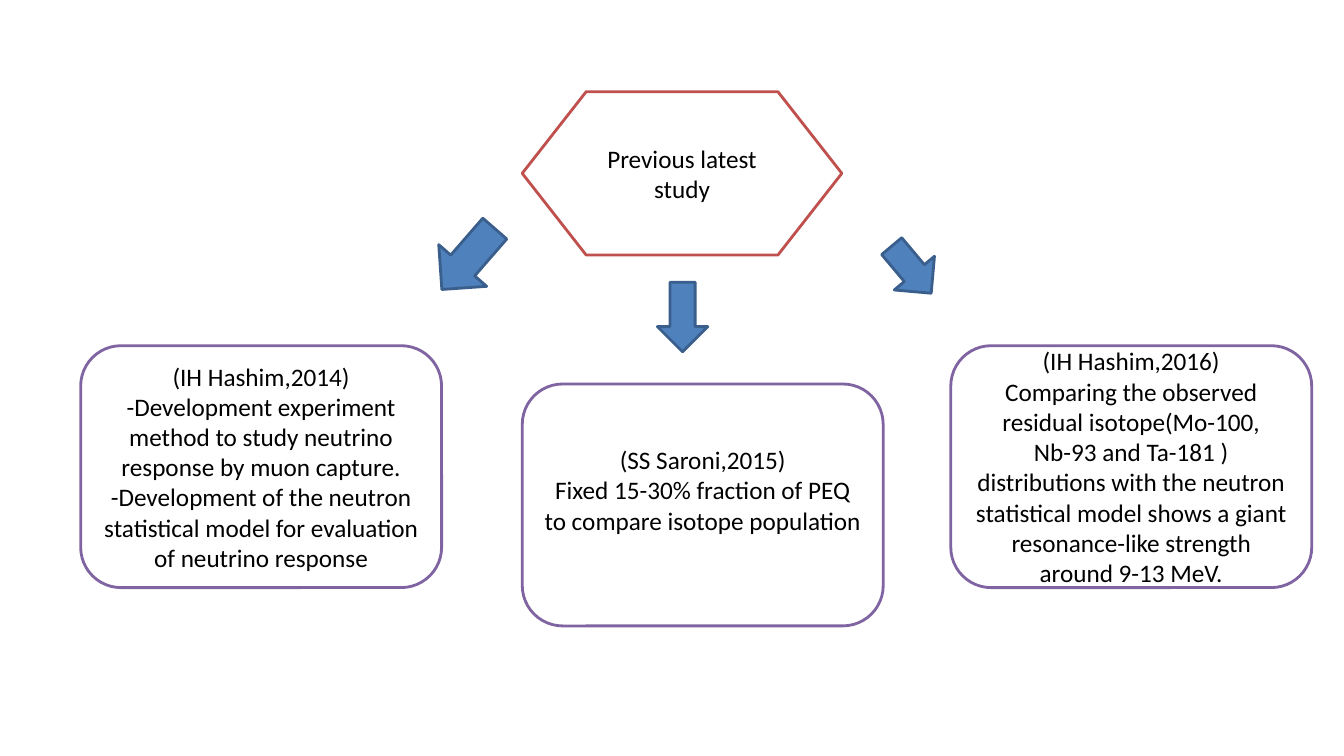
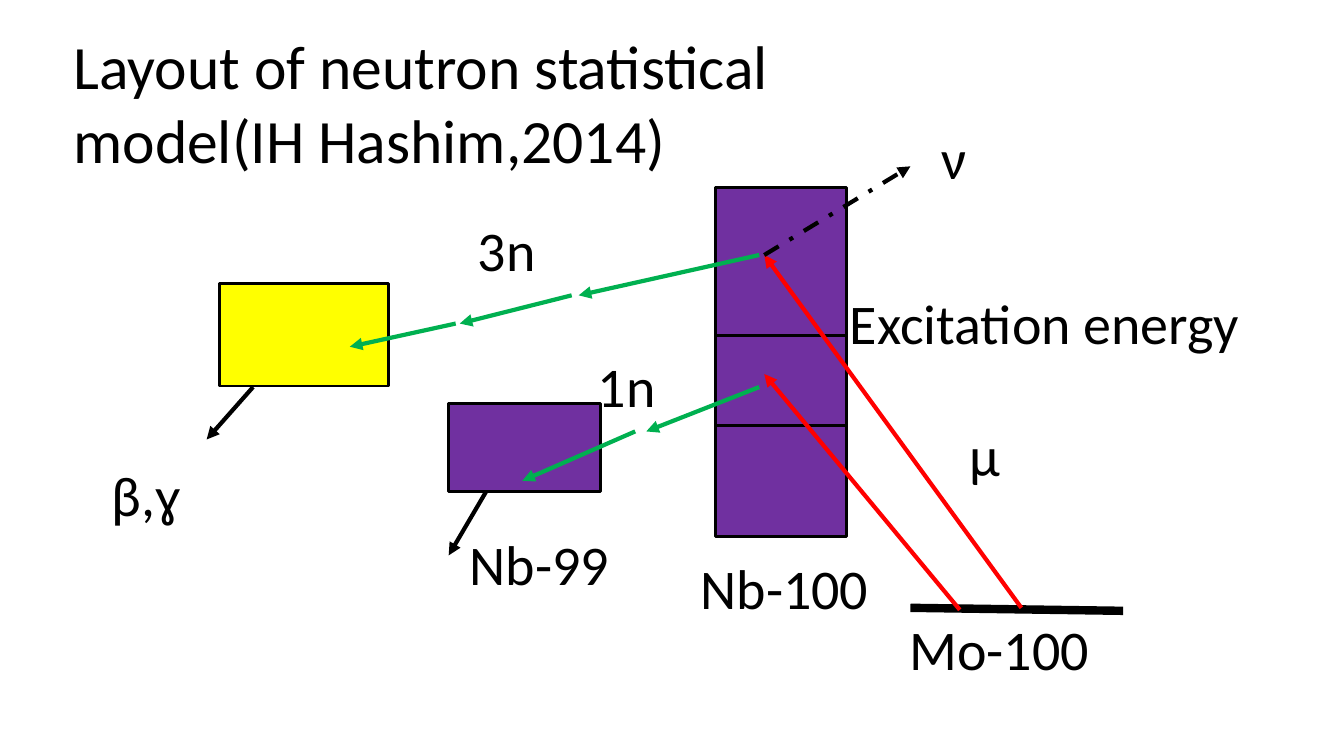
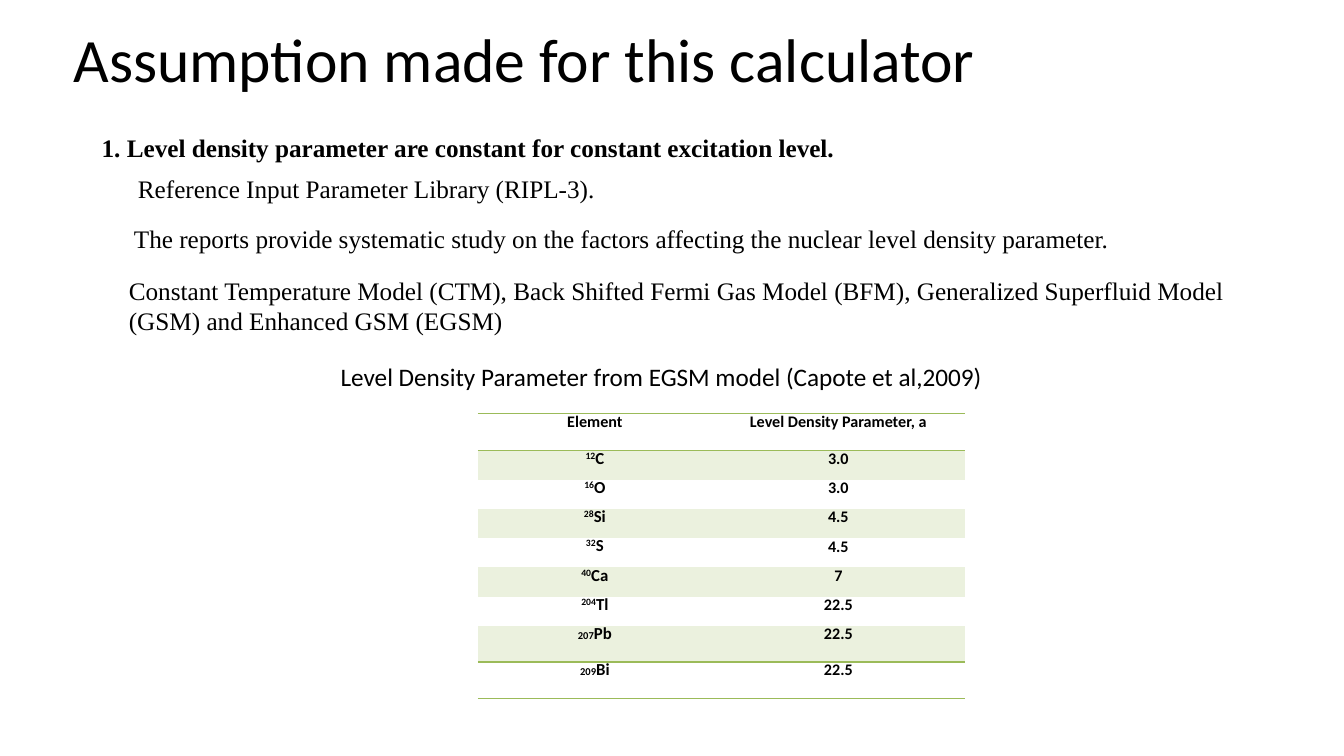
"""Build three slides on neutron statistical model studies."""
import dataclasses
from typing import Optional

import lxml.etree
import pptx
import pptx.dml.color
import pptx.enum.dml
import pptx.enum.shapes
import pptx.enum.text
import pptx.oxml.ns
import pptx.presentation
import pptx.shapes.autoshape
import pptx.slide
import pptx.table
import pptx.text.text
import pptx.util

Inches = pptx.util.Inches
Pt = pptx.util.Pt
RGBColor = pptx.dml.color.RGBColor
Shape = pptx.enum.shapes.MSO_SHAPE
Align = pptx.enum.text.PP_ALIGN
Anchor = pptx.enum.text.MSO_ANCHOR
qn = pptx.oxml.ns.qn

BLACK = RGBColor(0x00, 0x00, 0x00)
WHITE = RGBColor(0xFF, 0xFF, 0xFF)
CRIMSON = RGBColor(0xC0, 0x50, 0x4D)
LAVENDER = RGBColor(0x80, 0x64, 0xA2)
BLUE = RGBColor(0x4F, 0x81, 0xBD)
NAVY = RGBColor(0x3A, 0x5F, 0x8C)
PURPLE = RGBColor(0x70, 0x30, 0xA0)
YELLOW = RGBColor(0xFF, 0xFF, 0x00)
RED = RGBColor(0xFF, 0x00, 0x00)
GREEN = RGBColor(0x00, 0xB0, 0x50)
OLIVE = RGBColor(0x9B, 0xBB, 0x59)
PALE_OLIVE = RGBColor(0xEB, 0xF1, 0xDE)

SANS = "Calibri"
SERIF = "Times New Roman"
PLAIN_TABLE_STYLE = "{2D5ABB26-0587-4C30-8999-92F81FD0307C}"


@dataclasses.dataclass(frozen=True)
class Block:
    left: float
    top: float
    width: float
    height: float
    fill: RGBColor
    line: RGBColor = BLACK
    kind: Shape = Shape.RECTANGLE
    lines: tuple[str, ...] = ()
    rotation: float = 0
    bottom_inset: float = 0.05


@dataclasses.dataclass(frozen=True)
class Label:
    left: float
    top: float
    width: float
    height: float
    text: str
    size: float = 18
    font: str = SANS
    bold: bool = False


@dataclasses.dataclass(frozen=True)
class Path:
    start: tuple[float, float]
    end: tuple[float, float]
    color: RGBColor
    width: float = 3
    arrow: bool = True
    dash: Optional[pptx.enum.dml.MSO_LINE] = None


@dataclasses.dataclass(frozen=True)
class Nuclide:
    mass: str
    symbol: str
    density: str
    raised: bool = True
    height: float = 0.29


def study(left: float, top: float, *lines: str, bottom_inset: float = 0.05) -> Block:
    """Describe one rounded study box."""
    return Block(left, top, 3.58, 2.4, WHITE, LAVENDER, Shape.ROUNDED_RECTANGLE,
                 lines, bottom_inset=bottom_inset)


def pointer(left: float, top: float, width: float, height: float, rotation: float = 0) -> Block:
    """Describe one block arrow leading to a study."""
    return Block(left, top, width, height, BLUE, NAVY, Shape.DOWN_ARROW, rotation=rotation)


def caption(left: float, top: float, width: float, text: str) -> Label:
    """Describe one large diagram label."""
    return Label(left, top, width, 0.77, text, 40)


STUDY_BLOCKS = (
    Block(5.18, 0.91, 3.17, 1.62, WHITE, CRIMSON, Shape.FLOWCHART_PREPARATION,
          ("Previous latest study",)),
    study(0.8, 3.43, "(IH Hashim,2014)",
          "-Development experiment method to study neutrino response by muon capture.",
          "-Development of the neutron statistical model for evaluation of neutrino response"),
    study(5.18, 3.81, "(SS Saroni,2015)",
          "Fixed 15-30% fraction of PEQ to compare isotope population", bottom_inset=0.35),
    study(9.43, 3.43, "(IH Hashim,2016)",
          "Comparing the observed residual isotope(Mo-100, Nb-93 and Ta-181 ) distributions "
          "with the neutron statistical model shows a giant resonance-like strength "
          "around 9-13 MeV."),
    pointer(6.52, 2.8, 0.5, 0.69),
    pointer(4.33, 2.17, 0.63, 0.8, 41),
    pointer(8.78, 2.37, 0.52, 0.61, 320),
)

LEVEL_HEIGHTS = (1.47, 0.89, 1.1)
DAUGHTERS = (
    Block(4.45, 4, 1.51, 0.88, PURPLE),
    Block(2.18, 2.81, 1.67, 1.02, YELLOW),
)
TRANSITIONS = (
    Path((9.03, 6.03), (11.14, 6.06), BLACK, 6, arrow=False),
    Path((9.52, 6.05), (7.58, 3.71), RED),
    Path((10.13, 6.03), (7.58, 2.53), RED),
    Path((7.53, 3.84), (6.41, 4.28), GREEN),
    Path((6.3, 4.28), (5.18, 4.77), GREEN),
    Path((7.53, 2.53), (5.74, 2.93), GREEN),
    Path((5.67, 2.93), (4.56, 3.21), GREEN),
    Path((4.52, 3.21), (3.47, 3.44), GREEN),
    Path((2.51, 3.84), (2.05, 4.36), BLACK),
    Path((4.82, 4.88), (4.45, 5.51), BLACK),
    Path((7.58, 2.53), (9.03, 1.65), BLACK, dash=pptx.enum.dml.MSO_LINE.DASH_DOT),
)
MODEL_LABELS = (
    caption(8.92, 6.05, 2.96, "Mo-100"),
    caption(6.85, 5.44, 3.17, "Nb-100"),
    caption(4.56, 5.2, 2.36, "Nb-99"),
    caption(1.01, 4.52, 2.42, "β,ɣ"),
    caption(5.83, 3.44, 1.22, "1n"),
    caption(4.64, 2.09, 1.26, "3n"),
    caption(9.52, 4.12, 1.17, "μ"),
    caption(9.24, 1.18, 1.17, "ν"),
    caption(8.33, 2.81, 4.64, "Excitation energy"),
)

ASSUMPTIONS = (
    Label(0.91, 1.26, 8.48, 0.4,
          "1. Level density parameter are constant for constant excitation level.",
          font=SERIF, bold=True),
    Label(1.27, 1.67, 5, 0.4, "Reference Input Parameter Library (RIPL-3).", font=SERIF),
    Label(1.23, 2.17, 10.78, 0.4,
          "The reports provide systematic study on the factors affecting "
          "the nuclear level density parameter.", font=SERIF),
    Label(1.18, 2.68, 11.47, 0.71,
          "Constant Temperature Model (CTM), Back Shifted Fermi Gas Model (BFM), "
          "Generalized Superfluid Model (GSM) and Enhanced GSM (EGSM)", font=SERIF),
    Label(3.28, 3.54, 6.67, 0.4,
          "Level Density Parameter from EGSM model (Capote et al,2009)"),
)
COLUMNS = (("Element", 2.32), ("Level Density Parameter, a", 2.51))
HEADER_HEIGHT = 0.37
NUCLIDES = (
    Nuclide("12", "C", "3.0"),
    Nuclide("16", "O", "3.0"),
    Nuclide("28", "Si", "4.5"),
    Nuclide("32", "S", "4.5"),
    Nuclide("40", "Ca", "7"),
    Nuclide("204", "Tl", "22.5"),
    Nuclide("207", "Pb", "22.5", raised=False, height=0.36),
    Nuclide("209", "Bi", "22.5", raised=False, height=0.36),
)


def style_paragraph(paragraph: pptx.text.text._Paragraph, size: float,
                    font: str = SANS, bold: bool = False) -> None:
    """Set the black font of a whole paragraph."""
    paragraph.font.name = font
    paragraph.font.size = Pt(size)
    paragraph.font.bold = bold
    paragraph.font.color.rgb = BLACK


def draw_block(slide: pptx.slide.Slide, block: Block) -> None:
    """Draw a filled, outlined shape with optional centred lines."""
    shape = slide.shapes.add_shape(block.kind, Inches(block.left), Inches(block.top),
                                   Inches(block.width), Inches(block.height))
    shape.shadow.inherit = False
    shape.rotation = block.rotation
    shape.fill.solid()
    shape.fill.fore_color.rgb = block.fill
    shape.line.color.rgb = block.line
    shape.line.width = Pt(2)
    if not block.lines:
        return
    frame = shape.text_frame
    frame.word_wrap = True
    frame.vertical_anchor = Anchor.MIDDLE
    frame.margin_bottom = Inches(block.bottom_inset)
    frame.text = "\n".join(block.lines)
    for paragraph in frame.paragraphs:
        paragraph.alignment = Align.CENTER
        style_paragraph(paragraph, 18)


def draw_label(slide: pptx.slide.Slide, label: Label) -> None:
    """Draw one wrapped line of free text."""
    frame = slide.shapes.add_textbox(Inches(label.left), Inches(label.top),
                                     Inches(label.width), Inches(label.height)).text_frame
    frame.word_wrap = True
    frame.text = label.text
    style_paragraph(frame.paragraphs[0], label.size, label.font, label.bold)


def draw_title(slide: pptx.slide.Slide, text: str, top: float, height: float) -> None:
    """Draw the slide title in the shared style."""
    draw_label(slide, Label(0.63, top, 9.2, height, text, 44))


def draw_path(slide: pptx.slide.Slide, route: Path) -> None:
    """Draw a straight line, with an arrowhead where asked."""
    connector = slide.shapes.add_connector(
        pptx.enum.shapes.MSO_CONNECTOR.STRAIGHT,
        *(Inches(value) for value in (*route.start, *route.end)))
    connector.line.color.rgb = route.color
    connector.line.width = Pt(route.width)
    if route.dash is not None:
        connector.line.dash_style = route.dash
    properties = connector._element.spPr
    if route.arrow:
        lxml.etree.SubElement(properties.find(qn("a:ln")), qn("a:tailEnd"), type="triangle")
    lxml.etree.SubElement(properties, qn("a:effectLst"))


def rule_cell(cell: pptx.table._Cell) -> None:
    """Rule a cell above and below."""
    properties = cell._tc.get_or_add_tcPr()
    for side in ("a:lnT", "a:lnB"):
        border = lxml.etree.SubElement(properties, qn(side), w=str(Pt(1)))
        solid = lxml.etree.SubElement(border, qn("a:solidFill"))
        lxml.etree.SubElement(solid, qn("a:srgbClr"), val=str(OLIVE))


def prepare_cell(cell: pptx.table._Cell, ruled: bool, shaded: bool) -> pptx.text.text._Paragraph:
    """Style a cell and return its centred paragraph."""
    cell.margin_left = cell.margin_right = cell.margin_top = cell.margin_bottom = 0
    if ruled:
        rule_cell(cell)
    cell.fill.solid()
    cell.fill.fore_color.rgb = PALE_OLIVE if shaded else WHITE
    paragraph = cell.text_frame.paragraphs[0]
    paragraph.alignment = Align.CENTER
    paragraph.line_spacing = Pt(13)
    style_paragraph(paragraph, 11.5, bold=True)
    return paragraph


def write_nuclide(paragraph: pptx.text.text._Paragraph, nuclide: Nuclide) -> None:
    """Write a mass number and its element symbol."""
    mass = paragraph.add_run()
    mass.text = nuclide.mass
    mass.font.size = Pt(12 if nuclide.raised else 7.5)
    if nuclide.raised:
        mass._r.get_or_add_rPr().set("baseline", "30000")
    symbol = paragraph.add_run()
    symbol.text = nuclide.symbol
    symbol.font.size = Pt(12)


def draw_density_table(slide: pptx.slide.Slide) -> None:
    """Draw the table of level density parameters."""
    heights = (HEADER_HEIGHT, *(nuclide.height for nuclide in NUCLIDES))
    table = slide.shapes.add_table(
        len(heights), len(COLUMNS), Inches(4.74), Inches(4.1),
        Inches(sum(width for _, width in COLUMNS)), Inches(sum(heights))).table
    table.first_row = table.horz_banding = False
    table._tbl.tblPr.find(qn("a:tableStyleId")).text = PLAIN_TABLE_STYLE
    for row, height in zip(table.rows, heights):
        row.height = Inches(height)
    for index, (heading, width) in enumerate(COLUMNS):
        table.columns[index].width = Inches(width)
        prepare_cell(table.cell(0, index), True, False).add_run().text = heading
    for index, nuclide in enumerate(NUCLIDES, start=1):
        element, density = (
            prepare_cell(table.cell(index, column), index == len(NUCLIDES), index % 2 == 1)
            for column in range(len(COLUMNS)))
        write_nuclide(element, nuclide)
        density.add_run().text = nuclide.density


def add_slide(deck: pptx.presentation.Presentation) -> pptx.slide.Slide:
    """Add a blank slide."""
    return deck.slides.add_slide(deck.slide_layouts[6])


def build_studies(slide: pptx.slide.Slide) -> None:
    """Show the previous studies."""
    for block in STUDY_BLOCKS:
        draw_block(slide, block)


def build_model(slide: pptx.slide.Slide) -> None:
    """Show the layout of the neutron statistical model."""
    draw_title(slide, "Layout of neutron statistical model(IH Hashim,2014)", 0.23, 1.6)
    top = 1.86
    for height in LEVEL_HEIGHTS:
        draw_block(slide, Block(7.1, top, 1.3, height, PURPLE))
        top += height
    for daughter in DAUGHTERS:
        draw_block(slide, daughter)
    for transition in TRANSITIONS:
        draw_path(slide, transition)
    for label in MODEL_LABELS:
        draw_label(slide, label)


def build_assumption(slide: pptx.slide.Slide) -> None:
    """Show the assumption and its parameter table."""
    draw_title(slide, "Assumption made for this calculator", 0.16, 0.84)
    for label in ASSUMPTIONS:
        draw_label(slide, label)
    draw_density_table(slide)


def main() -> None:
    """Build and save the deck."""
    deck = pptx.Presentation()
    deck.slide_width = Inches(13.33)
    deck.slide_height = Inches(7.5)
    for build in (build_studies, build_model, build_assumption):
        build(add_slide(deck))
    deck.save("out.pptx")


if __name__ == "__main__":
    main()
